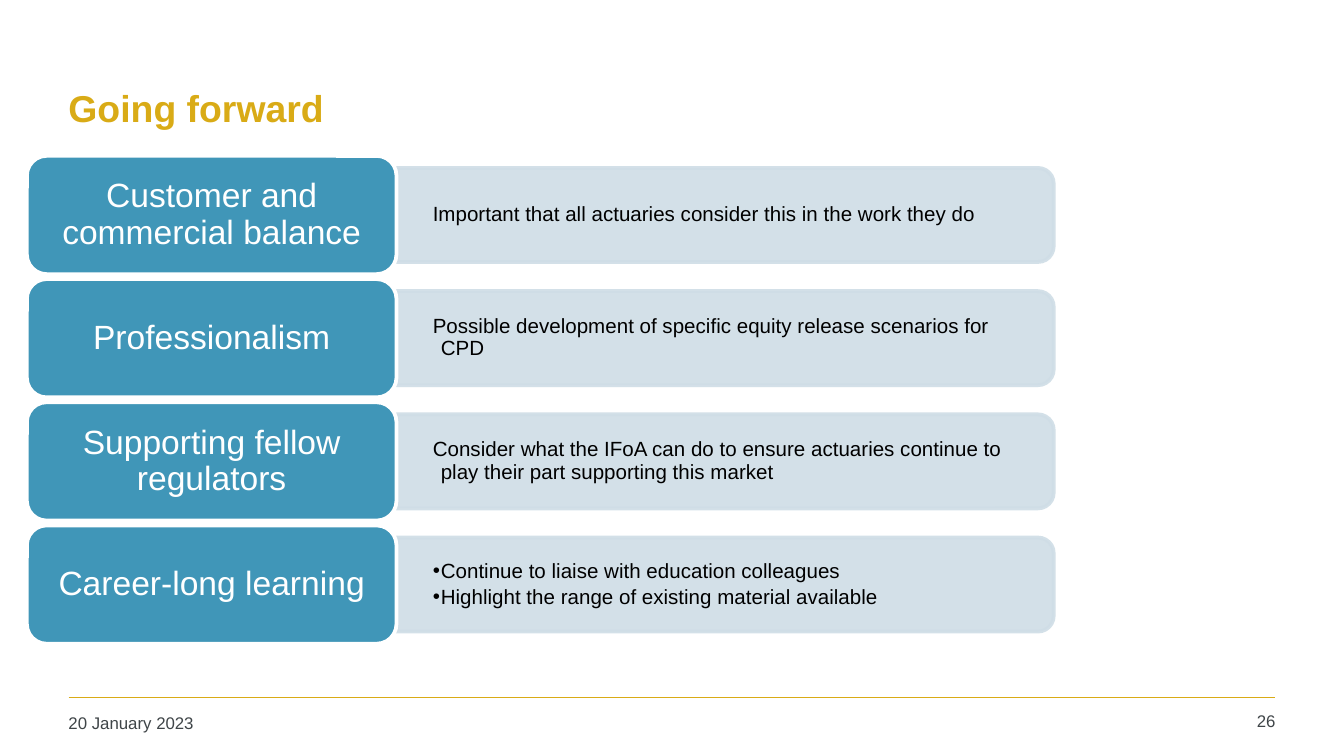
from dataclasses import dataclass

from lxml import etree
from pptx import Presentation
from pptx.dml.color import RGBColor
from pptx.enum.shapes import MSO_CONNECTOR, MSO_SHAPE
from pptx.enum.text import MSO_ANCHOR, PP_ALIGN
from pptx.oxml.ns import qn
from pptx.util import Inches, Pt

LEFT, CENTER, RIGHT = PP_ALIGN.LEFT, PP_ALIGN.CENTER, PP_ALIGN.RIGHT
TOP, MIDDLE = MSO_ANCHOR.TOP, MSO_ANCHOR.MIDDLE
ROUNDED, ROUNDED_TOP = MSO_SHAPE.ROUNDED_RECTANGLE, MSO_SHAPE.ROUND_2_SAME_RECTANGLE
STRAIGHT = MSO_CONNECTOR.STRAIGHT

FONT = "Arial"
GOLD, TEAL, PALE_BLUE = "D9AB16", "4096B8", "CFDDE6"
WHITE, BLACK, GREY = "FFFFFF", "000000", "3F4548"

SLIDE_WIDTH = 10
SLIDE_HEIGHT = SLIDE_WIDTH * 9 / 16
FIRST_ROW_TOP, LAST_ROW_TOP = 1.16, 3.91
LABEL_LEFT, LABEL_WIDTH, LABEL_HEIGHT = 0.2, 2.75, 0.88
PANEL_LEFT, PANEL_WIDTH, PANEL_HEIGHT = 2.95, 4.89, 0.7
DETAIL_WIDTH, DETAIL_HEIGHT = 4.85, 0.63
HANGING_INDENT = 0.06


@dataclass(frozen=True)
class Theme:
    label: str
    details: tuple[str, ...]


@dataclass(frozen=True)
class TextStyle:
    size: float
    color: str
    bold: bool = False
    align: PP_ALIGN = LEFT
    anchor: MSO_ANCHOR = TOP
    inset_x: float = 0.08
    inset_y: float = 0.04
    line_spacing: float | None = None
    space_after: float = 0
    hanging: bool = False


TITLE = TextStyle(20, GOLD, bold=True, anchor=MIDDLE)
DATE = TextStyle(9, GREY)
PAGE_NUMBER = TextStyle(9, GREY, align=RIGHT)
LABEL = TextStyle(18, WHITE, align=CENTER, anchor=MIDDLE, inset_x=0.11,
                  inset_y=0.08, line_spacing=0.9)
DETAIL = TextStyle(11, BLACK, anchor=MIDDLE, inset_x=0.27, inset_y=0.14,
                   line_spacing=0.9, space_after=2, hanging=True)

THEMES = (
    Theme("Customer and commercial balance",
          ("Important that all actuaries consider this in the work they do",)),
    Theme("Professionalism",
          ("Possible development of specific equity release scenarios for CPD",)),
    Theme("Supporting fellow regulators",
          ("Consider what the IFoA can do to ensure actuaries continue to "
           "play their part supporting this market",)),
    Theme("Career-long learning",
          ("Continue to liaise with education colleagues",
           "Highlight the range of existing material available")),
)


def rgb(color: str) -> RGBColor:
    """Turn a hex string into a colour."""
    return RGBColor.from_string(color)


def write(shape, lines: tuple[str, ...], style: TextStyle) -> None:
    """Fill a shape with one paragraph per line, bulleted if hanging and several."""
    frame = shape.text_frame
    frame.word_wrap = True
    frame.vertical_anchor = style.anchor
    frame.margin_left = frame.margin_right = Inches(style.inset_x)
    frame.margin_top = frame.margin_bottom = Inches(style.inset_y)
    frame.text = "\n".join(lines)
    for paragraph in frame.paragraphs:
        paragraph.alignment = style.align
        if style.line_spacing:
            paragraph.line_spacing = style.line_spacing
        paragraph.space_after = Pt(style.space_after)
        if style.hanging:
            properties = paragraph._p.get_or_add_pPr()
            properties.set("marL", str(Inches(HANGING_INDENT)))
            properties.set("indent", str(-Inches(HANGING_INDENT)))
            if len(lines) > 1:
                etree.SubElement(properties, qn("a:buFont")).set("typeface", FONT)
                etree.SubElement(properties, qn("a:buChar")).set("char", "•")
        font = paragraph.font
        font.name = FONT
        font.size = Pt(style.size)
        font.bold = style.bold
        font.color.rgb = rgb(style.color)


def add_text(slide, left: float, top: float, width: float, height: float,
             lines: tuple[str, ...], style: TextStyle) -> None:
    """Add a text box."""
    box = slide.shapes.add_textbox(
        Inches(left), Inches(top), Inches(width), Inches(height))
    write(box, lines, style)


def add_block(slide, preset: MSO_SHAPE, left: float, top: float, width: float,
              height: float, fill: str, outline: str):
    """Add a filled, outlined shape without shadow."""
    block = slide.shapes.add_shape(
        preset, Inches(left), Inches(top), Inches(width), Inches(height))
    block.shadow.inherit = False
    block.fill.solid()
    block.fill.fore_color.rgb = rgb(fill)
    block.line.color.rgb = rgb(outline)
    block.line.width = Pt(2)
    return block


def add_theme(slide, theme: Theme, top: float) -> None:
    """Draw one row: pale panel, its details and the label over its left edge."""
    middle = top + LABEL_HEIGHT / 2
    panel = add_block(
        slide, ROUNDED_TOP, PANEL_LEFT + (PANEL_WIDTH - PANEL_HEIGHT) / 2,
        middle - PANEL_WIDTH / 2, PANEL_HEIGHT, PANEL_WIDTH, PALE_BLUE, PALE_BLUE)
    panel.rotation = 90
    for color in panel._element.spPr.iter(qn("a:srgbClr")):
        etree.SubElement(color, qn("a:alpha")).set("val", "90000")
    add_text(slide, PANEL_LEFT, middle - DETAIL_HEIGHT / 2, DETAIL_WIDTH,
             DETAIL_HEIGHT, theme.details, DETAIL)
    label = add_block(slide, ROUNDED, LABEL_LEFT, top, LABEL_WIDTH, LABEL_HEIGHT,
                      TEAL, WHITE)
    write(label, (theme.label,), LABEL)


def add_footer_rule(slide) -> None:
    """Draw the gold line above the footer."""
    rule = slide.shapes.add_connector(
        STRAIGHT, Inches(0.51), Inches(5.19), Inches(9.49), Inches(5.19))
    rule.line.color.rgb = rgb(GOLD)
    rule.line.width = Pt(1)
    etree.SubElement(rule._element.spPr, qn("a:effectLst"))


def main() -> None:
    """Build and save the slide."""
    presentation = Presentation()
    presentation.slide_width = Inches(SLIDE_WIDTH)
    presentation.slide_height = Inches(SLIDE_HEIGHT)
    slide = presentation.slides.add_slide(presentation.slide_layouts[6])
    add_footer_rule(slide)
    add_text(slide, 0.43, 0.33, 9.07, 0.94, ("Going forward",), TITLE)
    add_text(slide, 0.43, 5.26, 2.2, 0.27, ("20 January 2023",), DATE)
    add_text(slide, 8.86, 5.25, 0.71, 0.28, ("26",), PAGE_NUMBER)
    row_pitch = (LAST_ROW_TOP - FIRST_ROW_TOP) / (len(THEMES) - 1)
    for row, theme in enumerate(THEMES):
        add_theme(slide, theme, FIRST_ROW_TOP + row * row_pitch)
    presentation.save("out.pptx")


if __name__ == "__main__":
    main()
